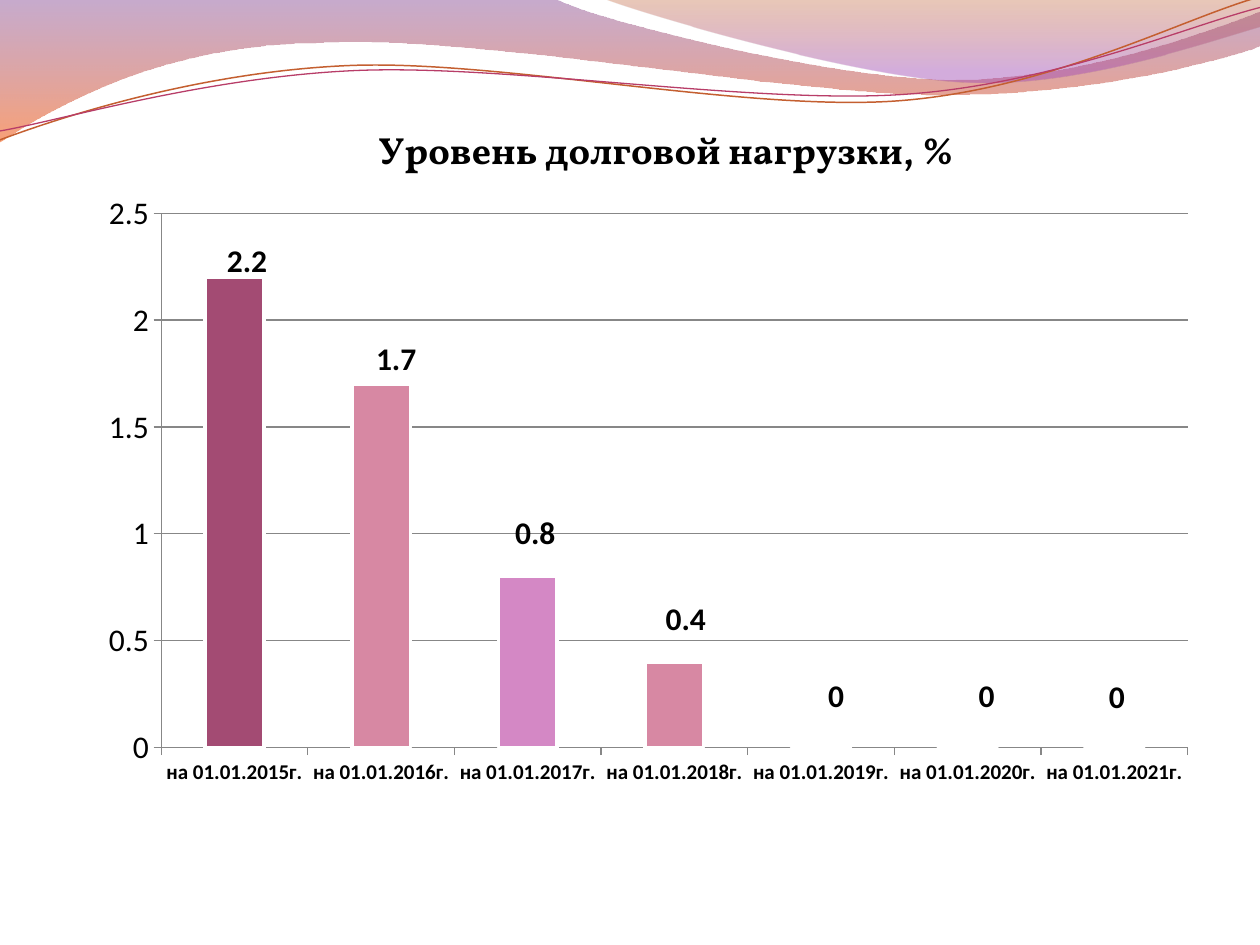
import math

from lxml import etree
from pptx import Presentation
from pptx import util as u
from pptx.chart.data import CategoryChartData
from pptx.dml.color import RGBColor
from pptx.enum import chart as c
from pptx.oxml import parse_xml
from pptx.oxml.ns import nsdecls, qn


def paint(fill, color):
    fill.solid()
    fill.fore_color.rgb = RGBColor.from_string(color)


def write(target, text=None, size=18, bold=False, font="Calibri", color="000000"):
    """Format a chart text element, setting its wording when text is given."""
    if text is None:
        style = target.font
    else:
        target.text_frame.text = text
        style = target.text_frame.paragraphs[0].runs[0].font
    style.size, style.bold, style.name = u.Pt(size), bold, font
    paint(style.fill, color)


presentation = Presentation()
presentation.slide_width, presentation.slide_height = u.Inches(10), u.Inches(7.5)
slide = presentation.slides.add_slide(presentation.slide_layouts[6])
paint(slide.background.fill, "FFFFFF")

# Waves: a segment is a line end (2 numbers) or a cubic Bezier curve (6 numbers).
# Gradient stops are (position, colour, opacity). A tilted wave turns about its pivot.
tilt = -2.7
waves = [
    {"start": (0, -0.01),
     "segments": [(4.4, -0.01), (4.76, 0.17, 6.64, 0.63, 7.58, 0.63),
                  (8.53, 0.63, 9.58, 0.26, 10, 0.09), (10.01, 0.36),
                  (9.83, 0.44, 8.7, 0.76, 7.46, 0.75), (6.22, 0.75, 3.82, 0.28, 2.57, 0.34),
                  (1.29, 0.35, 0.46, 0.83, -0.01, 1.13)],
     "stops": [(0, "834591", 45), (1, "F35307", 55)]},
    {"start": (4.79, -0.01),
     "segments": [(5.09, 0.11, 6.82, 0.62, 7.69, 0.65), (8.56, 0.69, 9.61, 0.32, 10, 0.21),
                  (10, 0)],
     "stops": [(0, "B74915", 30), (0.8, "A14BB4", 45)]},
    {"start": (0, 1.11),
     "segments": [(0.48, 0.93, 1.58, 0.57, 2.77, 0.52), (3.95, 0.47, 5.93, 0.89, 7.13, 0.8),
                  (8.33, 0.71, 9.38, 0.15, 9.98, -0.02)],
     "line": ("C45F30", 0.85), "pivot": (4.99, 0.58)},
    {"start": (0, 1.04),
     "segments": [(0.47, 0.96, 1.64, 0.61, 2.83, 0.56), (4.03, 0.51, 5.97, 0.83, 7.17, 0.75),
                  (8.36, 0.67, 9.41, 0.21, 10, 0.06)],
     "line": ("B83D68", 0.75), "pivot": (5, 0.59)},
]
for wave in waves:
    points = [wave["start"]]
    for segment in wave["segments"]:
        points += zip(segment[::2], segment[1::2])
    if "pivot" in wave:
        center_x, center_y = wave["pivot"]
        cosine, sine = math.cos(math.radians(-tilt)), math.sin(math.radians(-tilt))
        points = [(center_x + (x - center_x) * cosine - (y - center_y) * sine,
                   center_y + (x - center_x) * sine + (y - center_y) * cosine)
                  for x, y in points]
    points = [(u.Inches(x), u.Inches(y)) for x, y in points]
    builder = slide.shapes.build_freeform(*points[0])
    builder.add_line_segments(points[1:], close="stops" in wave)
    shape = builder.convert_to_shape()
    shape.shadow.inherit = False

    # Join each curve's three points into one Bezier command
    commands = iter(list(shape._element.iter(qn("a:lnTo"))))
    for segment in wave["segments"]:
        command = next(commands)
        if len(segment) == 6:
            curve = etree.Element(qn("a:cubicBezTo"))
            command.addprevious(curve)
            for part in (command, next(commands), next(commands)):
                curve.append(part[0])
                part.getparent().remove(part)

    if "stops" in wave:
        shape.line.fill.background()
        shape.fill.gradient()
        shape.fill.gradient_angle = 270
        for stop, (position, color, opacity) in zip(shape.fill.gradient_stops, wave["stops"]):
            stop.position = position
            stop.color.rgb = RGBColor.from_string(color)
        for element, (_, _, opacity) in zip(shape._element.iter(qn("a:srgbClr")), wave["stops"]):
            etree.SubElement(element, qn("a:alpha")).set("val", str(opacity * 1000))
    else:
        color, width = wave["line"]
        shape.fill.background()
        paint(shape.line.fill, color)
        shape.line.width = u.Pt(width)
        shape.rotation = tilt

# Debt chart
title = "Уровень долговой нагрузки, %"
chart_width, chart_height = 9.29, 6.22
data = CategoryChartData(number_format="General")
data.categories = [f"на 01.01.{year}г." for year in range(2015, 2022)]
data.add_series(title, (2.2, 1.7, 0.8, 0.4, 0, 0, 0))
chart = slide.shapes.add_chart(
    c.XL_CHART_TYPE.COLUMN_STACKED, u.Inches(0.35), u.Inches(0.84),
    u.Inches(chart_width), u.Inches(chart_height), data).chart
chart.has_legend = False
write(chart, font="Vollkorn")
chart.has_title = True
write(chart.chart_title, title, size=21.6, bold=True, font="Vollkorn")
chart.chart_title.include_in_layout = False

value_axis = chart.value_axis
value_axis.minimum_scale, value_axis.maximum_scale, value_axis.major_unit = 0, 2.5, 0.5
value_axis.has_major_gridlines = True
paint(value_axis.major_gridlines.format.line.fill, "878787")
for axis, size, bold in ((chart.category_axis, 12, True), (value_axis, 18, False)):
    write(axis.tick_labels, size=size, bold=bold)
    axis.major_tick_mark = c.XL_TICK_MARK.OUTSIDE
    axis.minor_tick_mark = c.XL_TICK_MARK.NONE
    paint(axis.format.line.fill, "878787")

plot = chart.plots[0]
plot.gap_width, plot.overlap, plot.vary_by_categories = 150, 100, False
series = plot.series[0]
paint(series.format.fill, "B83D68")
write(series.data_labels, bold=True)
series.data_labels.show_value = True
bar_colors = ("A34B73", "D788A3", "D488C5", "D788A3", "A34B73", "E3AFD8", "B83D68")
for index, color in enumerate(bar_colors):
    point = series.points[index]
    paint(point.format.fill, color)
    paint(point.format.line.fill, "FFFFFF")
    point.format.line.width = u.Pt(2)
    write(point.data_label, bold=True)

# Moved labels get no leader lines
labels = series.data_labels._element
for old_switch in labels.findall(qn("c:showLeaderLines")):
    labels.remove(old_switch)
etree.SubElement(labels, qn("c:showLeaderLines")).set("val", "0")
labels.append(parse_xml(
    f'<c:extLst {nsdecls("c")}><c:ext uri="{{CE6537A1-D6FC-4f65-9D91-7224C49458BB}}" '
    'xmlns:c15="http://schemas.microsoft.com/office/drawing/2012/chart">'
    '<c15:showLeaderLines val="0"/></c:ext></c:extLst>'))

# Manual layouts: labels are moved from the bar centres by inches
label_offsets = [(0.1, -1.99), (0.12, -1.64), (0.06, -1.02), (0.09, -0.68),
                 (0.12, -0.41), (0.15, -0.41), (0.02, -0.4)]
layouts = [(label.find(qn("c:idx")), {"x": x / chart_width, "y": y / chart_height})
           for label, (x, y) in zip(labels.iter(qn("c:dLbl")), label_offsets)]
edges = {"xMode": "edge", "yMode": "edge"}
layouts.append((chart.chart_title._element.find(qn("c:tx")),
                {**edges, "x": 2.6 / chart_width, "y": 0.08 / chart_height}))
plot_area = chart._chartSpace.find(".//" + qn("c:plotArea"))
layouts.append((plot_area, {"layoutTarget": "inner", **edges,
                            "x": 0.1, "y": 0.137, "w": 0.877, "h": 0.682}))
for anchor, values in layouts:
    parts = "".join(f'<c:{name} val="{value}"/>' for name, value in values.items())
    layout = parse_xml(f'<c:layout {nsdecls("c")}><c:manualLayout>{parts}'
                       '</c:manualLayout></c:layout>')
    owner = plot_area if anchor is plot_area else anchor.getparent()
    for old_layout in owner.findall(qn("c:layout")):
        owner.remove(old_layout)
    if anchor is plot_area:
        plot_area.insert(0, layout)
    else:
        anchor.addnext(layout)

presentation.save("out.pptx")
